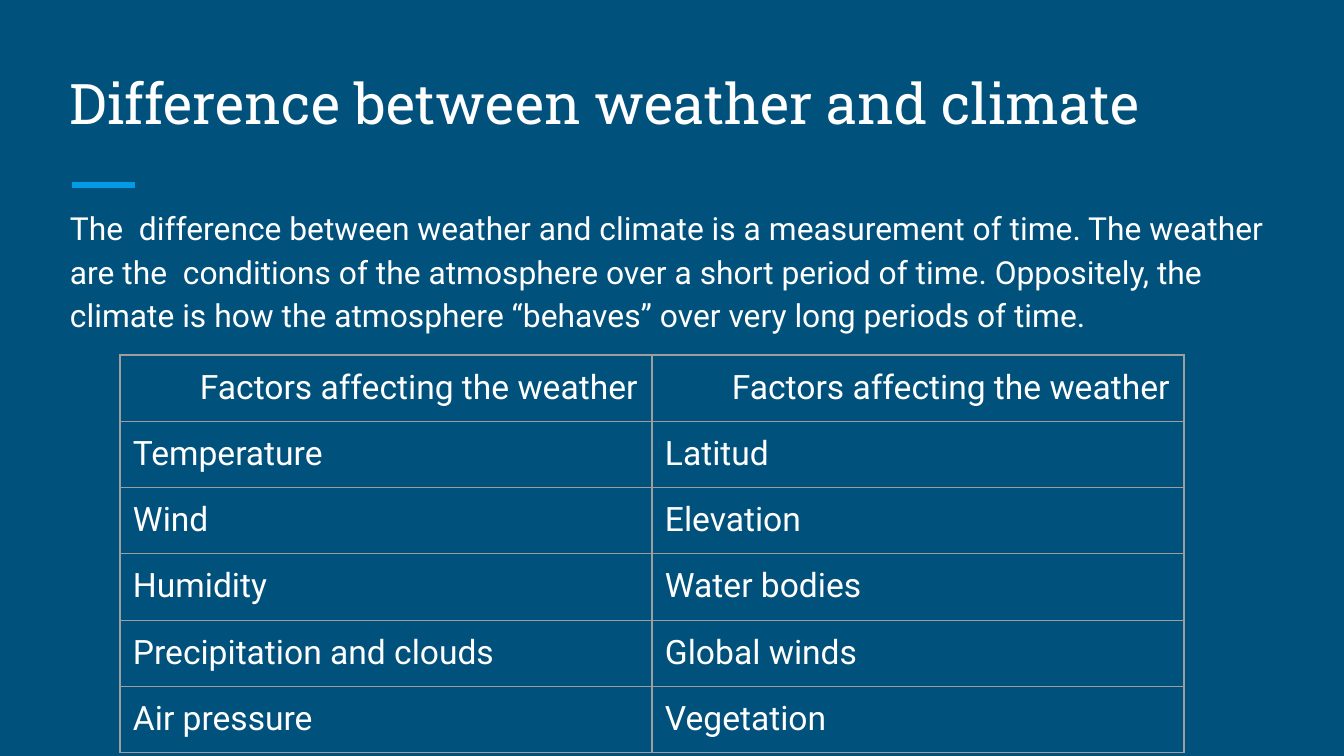
import pptx
import pptx.util
import pptx.oxml
import pptx.enum.shapes
import pptx.enum.text
from pptx.dml.color import RGBColor
from lxml import etree

# Content
TITLE = "Difference between weather and climate"
BODY = ("The  difference between weather and climate is a measurement of time. "
        "The weather are the  conditions of the atmosphere over a short period of time. "
        "Oppositely, the climate is how the atmosphere “behaves” over very long periods of time.")
FACTORS = [
    ("Factors affecting the weather", "Factors affecting the weather"),
    ("Temperature", "Latitud"),
    ("Wind", "Elevation"),
    ("Humidity", "Water bodies"),
    ("Precipitation and clouds", "Global winds"),
    ("Air pressure", "Vegetation"),
]
COLORS = {"bg": "00517C", "text": "FFFFFF", "accent": "039BE5", "border": "9E9E9E"}

# Layout in px
SCALE = 914400 / 134.4
WIDTH, HEIGHT = 1344, 756
TEXT_X, TEXT_W = 57, 1230
TABLE_X, TABLE_Y, COL_W, ROW_H = 120, 355, 532, 62
INSET, HEADER_INDENT = 13, 67


def px(n):
    return pptx.util.Emu(round(n * SCALE))


def rgb(name):
    return RGBColor.from_string(COLORS[name])


def write(p, text, font, size):
    p.text = text
    p.font.name = font
    p.font.size = pptx.util.Pt(size)
    p.font.color.rgb = rgb("text")


def add_text(slide, y, h, text, font, size, anchor):
    tf = slide.shapes.add_textbox(px(TEXT_X), px(y), px(TEXT_W), px(h)).text_frame
    tf.word_wrap = True
    tf.vertical_anchor = anchor
    tf.margin_left = tf.margin_right = tf.margin_top = tf.margin_bottom = px(INSET)
    p = tf.paragraphs[0]
    write(p, text, font, size)
    return p


def set_borders(cell):
    tcPr = cell._tc.get_or_add_tcPr()
    for i, side in enumerate(("lnL", "lnR", "lnT", "lnB")):
        tcPr.insert(i, pptx.oxml.parse_xml(
            f'<a:{side} xmlns:a="http://schemas.openxmlformats.org/drawingml/2006/main" w="9525">'
            f'<a:solidFill><a:srgbClr val="{COLORS["border"]}"/></a:solidFill></a:{side}>'))


prs = pptx.Presentation()
prs.slide_width, prs.slide_height = px(WIDTH), px(HEIGHT)
slide = prs.slides.add_slide(prs.slide_layouts[6])
slide.background.fill.solid()
slide.background.fill.fore_color.rgb = rgb("bg")

# Accent line
line = slide.shapes.add_connector(
    pptx.enum.shapes.MSO_CONNECTOR.STRAIGHT, px(72), px(185), px(135), px(185))
line.line.color.rgb = rgb("accent")
line.line.width = pptx.util.Pt(3)
etree.SubElement(line._element.spPr, pptx.oxml.ns.qn("a:effectLst"))

# Title and body
ANCHOR = pptx.enum.text.MSO_ANCHOR
add_text(slide, 48, 101, TITLE, "Roboto Slab", 30, ANCHOR.BOTTOM)
p = add_text(slide, 190, 554, BODY, "Roboto", 17, ANCHOR.TOP)
p.line_spacing = 1.15
p.space_after = pptx.util.Pt(16)

# Table of factors
rows, cols = len(FACTORS), len(FACTORS[0])
table = slide.shapes.add_table(rows, cols, px(TABLE_X), px(TABLE_Y),
                               px(cols * COL_W), px(rows * ROW_H)).table
table.first_row = table.horz_banding = False
for col in table.columns:
    col.width = px(COL_W)
for r, factors in enumerate(FACTORS):
    table.rows[r].height = px(ROW_H)
    for c, factor in enumerate(factors):
        cell = table.cell(r, c)
        cell.fill.background()
        set_borders(cell)
        cell.margin_left = cell.margin_right = cell.margin_top = cell.margin_bottom = px(INSET)
        p = cell.text_frame.paragraphs[0]
        write(p, factor, "Roboto", 18)
        if r == 0:
            pPr = p._p.get_or_add_pPr()
            pPr.set("marL", str(px(HEADER_INDENT)))
            pPr.set("indent", "0")

prs.save("out.pptx")
